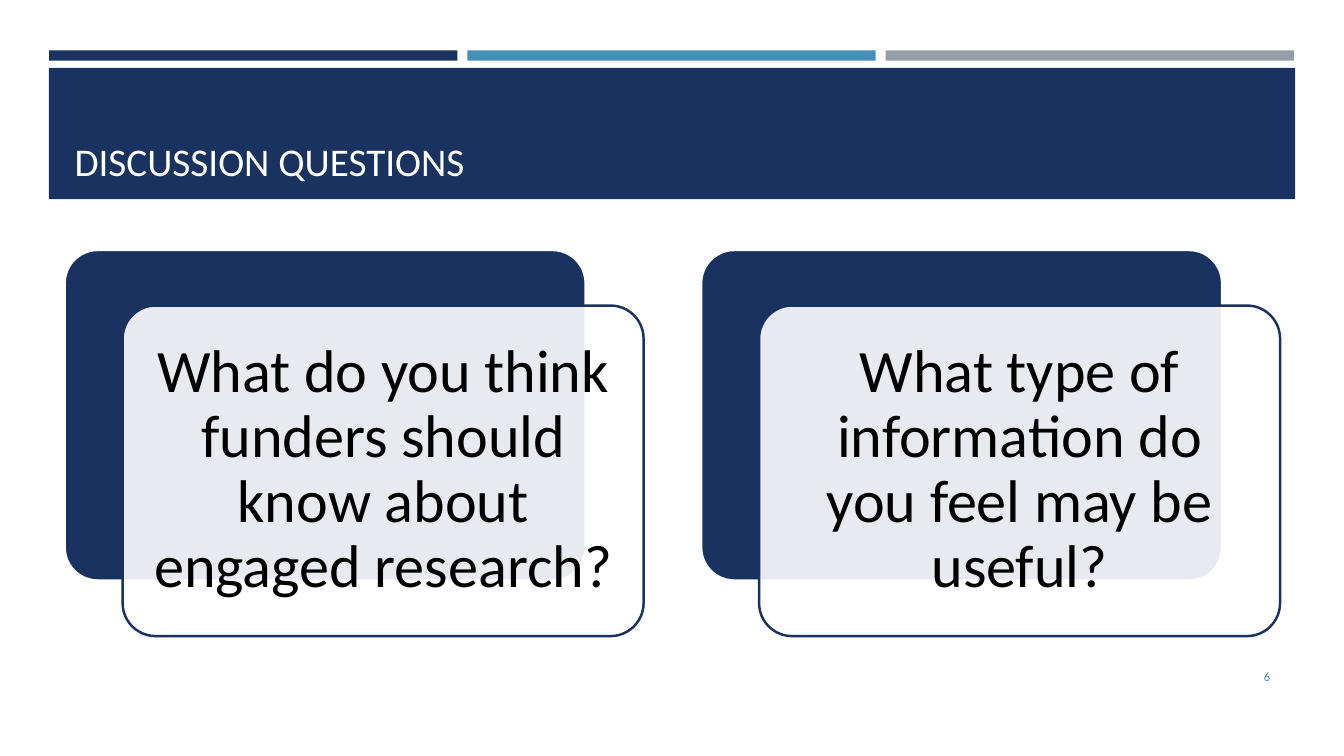
from lxml import etree
from pptx import Presentation
from pptx.dml.color import RGBColor
from pptx.enum.shapes import MSO_SHAPE
from pptx.enum.text import MSO_ANCHOR, PP_ALIGN
from pptx.oxml.ns import qn
from pptx.util import Cm, Pt

RECT, ROUNDED = MSO_SHAPE.RECTANGLE, MSO_SHAPE.ROUNDED_RECTANGLE
BOTTOM, MIDDLE = MSO_ANCHOR.BOTTOM, MSO_ANCHOR.MIDDLE
LEFT, CENTER, RIGHT = PP_ALIGN.LEFT, PP_ALIGN.CENTER, PP_ALIGN.RIGHT

NAVY = RGBColor(0x1A, 0x32, 0x60)
BLUE = RGBColor(0x45, 0x90, 0xB8)
GRAY = RGBColor(0x96, 0x9F, 0xA7)
WHITE = RGBColor(0xFF, 0xFF, 0xFF)
OFF_WHITE = RGBColor(0xFF, 0xFE, 0xFF)
BLACK = RGBColor(0, 0, 0)
FONT = "Calibri"

TITLE = "DISCUSSION QUESTIONS"
PAGE_NUMBER = "6"
QUESTIONS = [
    "What do you think funders should know about engaged research?",
    "What type of information do you feel may be useful?",
]
STRIPE_COLORS = [NAVY, BLUE, GRAY]

# All lengths in centimetres
STRIPE_LEFT, STRIPE_TOP, STRIPE_STEP = 1.24, 1.27, 10.54
STRIPE_WIDTH, STRIPE_HEIGHT = 10.29, 0.26
BAND_BOX = (1.23, 1.71, 31.41, 3.31)
TITLE_BOX = (1.63, 1.96, 30.63, 2.81)
PAGE_NUMBER_BOX = (29.34, 16.54, 2.92, 1.02)
CARD_LEFT, CARD_TOP, CARD_STEP = 1.63, 6.3, 16.04
CARD_WIDTH, CARD_HEIGHT = 13.13, 8.33
FRONT_SHIFT_X, FRONT_SHIFT_Y = 1.46, 1.4
CARD_INSET = 0.46

prs = Presentation()
prs.slide_width, prs.slide_height = Cm(33.87), Cm(19.05)
slide = prs.slides.add_slide(prs.slide_layouts[6])


def add_block(preset, box, fill, line=None):
    block = slide.shapes.add_shape(preset, *map(Cm, box))
    block.shadow.inherit = False
    block.fill.solid()
    block.fill.fore_color.rgb = fill
    if line is None:
        block.line.fill.background()
    else:
        block.line.color.rgb = line
        block.line.width = Pt(1.75)
    if preset == ROUNDED:
        block.adjustments[0] = 0.1
    return block


def set_opacity(block, percent):
    color = block.fill._xPr.find(qn("a:solidFill"))[0]
    etree.SubElement(color, qn("a:alpha")).set("val", str(percent * 1000))


def write(holder, text, size, color, align, anchor):
    frame = holder.text_frame
    frame.word_wrap = True
    frame.vertical_anchor = anchor
    frame.text = text
    paragraph = frame.paragraphs[0]
    paragraph.alignment = align
    font = paragraph.runs[0].font
    font.name, font.size = FONT, Pt(size)
    font.color.rgb = color
    return frame


def add_question(left, question):
    add_block(ROUNDED, (left, CARD_TOP, CARD_WIDTH, CARD_HEIGHT), NAVY, WHITE)
    front_box = (left + FRONT_SHIFT_X, CARD_TOP + FRONT_SHIFT_Y, CARD_WIDTH, CARD_HEIGHT)
    front = add_block(ROUNDED, front_box, WHITE, NAVY)
    set_opacity(front, 90)
    frame = write(front, question, 43, BLACK, CENTER, MIDDLE)
    frame.margin_left = frame.margin_right = Cm(CARD_INSET)
    frame.margin_top = frame.margin_bottom = Cm(CARD_INSET)
    frame.paragraphs[0].line_spacing = 0.9


for i, color in enumerate(STRIPE_COLORS):
    stripe_left = STRIPE_LEFT + i * STRIPE_STEP
    add_block(RECT, (stripe_left, STRIPE_TOP, STRIPE_WIDTH, STRIPE_HEIGHT), color)

add_block(RECT, BAND_BOX, NAVY)
title = slide.shapes.add_textbox(*map(Cm, TITLE_BOX))
write(title, TITLE, 28, OFF_WHITE, LEFT, BOTTOM)
page_number = slide.shapes.add_textbox(*map(Cm, PAGE_NUMBER_BOX))
write(page_number, PAGE_NUMBER, 9, BLUE, RIGHT, MIDDLE)

for i, question in enumerate(QUESTIONS):
    add_question(CARD_LEFT + i * CARD_STEP, question)

prs.save("out.pptx")
